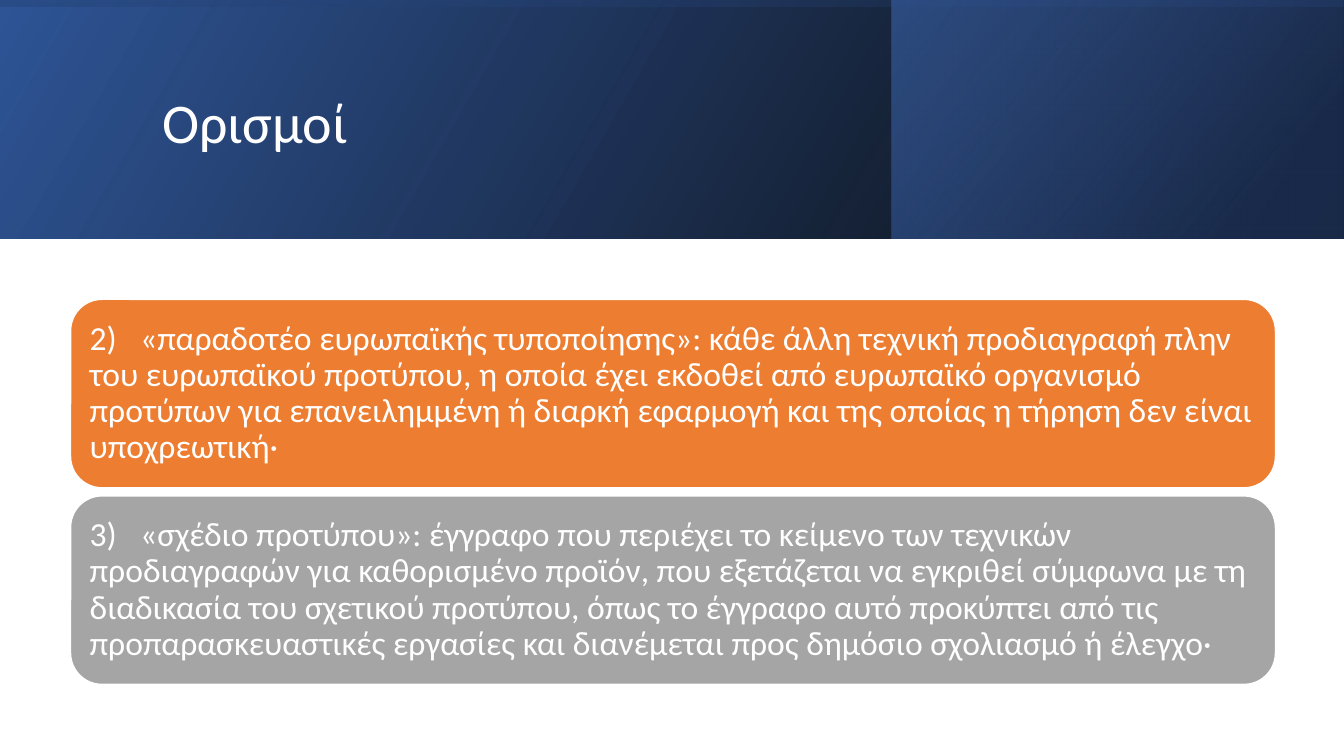
import pptx
import pptx.util
import pptx.dml.color
import pptx.enum.shapes
import pptx.enum.text
import lxml.etree

Inches = pptx.util.Inches
Kind = pptx.enum.shapes.MSO_SHAPE
Anchor = pptx.enum.text.MSO_ANCHOR
Align = pptx.enum.text.PP_ALIGN
SPACE = "http://schemas.openxmlformats.org/drawingml/2006/main"


def color(code):
    return pptx.dml.color.RGBColor.from_string(code)


def write(shape, text, size, tab=None):
    """Put one white paragraph in the shape, with an optional tab stop."""
    frame = shape.text_frame
    frame.word_wrap = True
    frame.vertical_anchor = Anchor.MIDDLE
    frame.margin_top = frame.margin_bottom = Inches(0.1)
    line = frame.paragraphs[0]
    line.text = text
    line.alignment = Align.LEFT
    if tab:
        props = line._p.get_or_add_pPr()
        stops = lxml.etree.SubElement(props, f"{{{SPACE}}}tabLst")
        lxml.etree.SubElement(stops, f"{{{SPACE}}}tab", pos=str(tab), algn="l")
    line.line_spacing = 0.9
    line.font.name = "Calibri"
    line.font.size = pptx.util.Pt(size)
    line.font.color.rgb = color("FFFFFF")


deck = pptx.Presentation()
deck.slide_width = Inches(13.33)
deck.slide_height = Inches(7.5)
slide = deck.slides.add_slide(deck.slide_layouts[6])
shapes = slide.shapes

# Header band: left, top, width, height, rotation, angle,
# then stops as (position %, colour, opacity %)
bands = [
    (0, 0, 13.33, 2.37, 0, 330, [(0, "000000", 96), (100, "2F5597", 100)]),
    (8.84, 0, 4.48, 2.37, 0, 320, [(19, "203864", 68), (100, "4472C4", 48)]),
    (5.48, -5.48, 2.37, 13.33, 270, 350, [(23, "2F5597", 16), (99, "000000", 45)]),
]
for left, top, width, height, turn, angle, stops in bands:
    band = shapes.add_shape(Kind.RECTANGLE, Inches(left), Inches(top),
                            Inches(width), Inches(height))
    band.shadow.inherit = False
    band.line.fill.background()
    band.rotation = turn
    band._element.spPr.xfrm.set("flipH", "1")
    band.fill.gradient()
    grad = band._element.spPr.find(f"{{{SPACE}}}gradFill")
    for (place, code, alpha), stop in zip(stops, band.fill.gradient_stops):
        stop.position = place / 100
        stop.color.rgb = color(code)
        tint = grad.findall(f".//{{{SPACE}}}srgbClr")[-1 if stop is None else stops.index((place, code, alpha))]
        lxml.etree.SubElement(tint, f"{{{SPACE}}}alpha", val=str(alpha * 1000))
    grad.find(f"{{{SPACE}}}lin").set("ang", str(angle * 60000))

title = shapes.add_textbox(Inches(1.51), Inches(0.38), Inches(10.63), Inches(1.72))
write(title, "Ορισμοί", 40)

terms = [
    ("ED7D31", "2)\t«παραδοτέο ευρωπαϊκής τυποποίησης»: κάθε άλλη τεχνική "
     "προδιαγραφή πλην του ευρωπαϊκού προτύπου, η οποία έχει εκδοθεί από "
     "ευρωπαϊκό οργανισμό προτύπων για επανειλημμένη ή διαρκή εφαρμογή και "
     "της οποίας η τήρηση δεν είναι υποχρεωτική·"),
    ("A5A5A5", "3)\t«σχέδιο προτύπου»: έγγραφο που περιέχει το κείμενο των "
     "τεχνικών προδιαγραφών για καθορισμένο προϊόν, που εξετάζεται να εγκριθεί "
     "σύμφωνα με τη διαδικασία του σχετικού προτύπου, όπως το έγγραφο αυτό "
     "προκύπτει από τις προπαρασκευαστικές εργασίες και διανέμεται προς "
     "δημόσιο σχολιασμό ή έλεγχο·"),
]
for row, (code, text) in enumerate(terms):
    card = shapes.add_shape(Kind.ROUNDED_RECTANGLE, Inches(0.7),
                            Inches(2.97 + 1.95 * row), Inches(11.95), Inches(1.87))
    card.shadow.inherit = False
    card.fill.solid()
    card.fill.fore_color.rgb = color(code)
    card.line.color.rgb = color("FFFFFF")
    card.line.width = pptx.util.Pt(1)
    write(card, text, 24, Inches(0.5))

deck.save("out.pptx")
